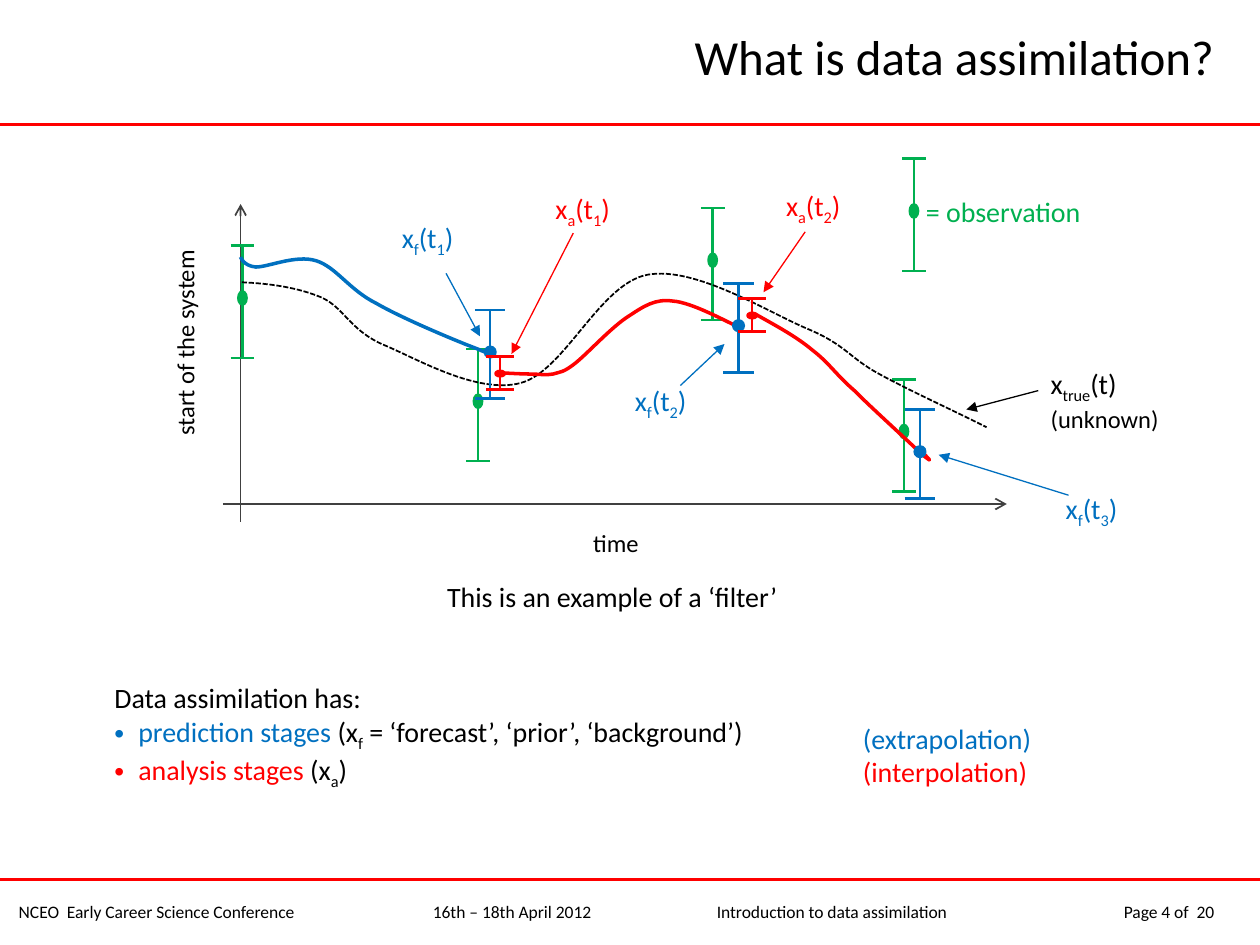
import pptx
import pptx.dml.color
import pptx.enum.dml
import pptx.enum.shapes
import pptx.enum.text
import pptx.oxml
import pptx.oxml.ns
import pptx.util

Pt = pptx.util.Pt
qn = pptx.oxml.ns.qn
COLOURS = {"black": "000000", "axis": "404040", "red": "FF0000", "blue": "0070C0", "green": "00B050"}
BARS = {
    "observation": dict(size=(13.5, 64.1), dot=(5.2, 8), middle=29.9, colour="green"),
    "forecast": dict(size=(17.4, 50.7), dot=(6.5, 6.5), middle=24.1, colour="blue"),
    "analysis": dict(size=(15.8, 18.7), dot=(5.8, 3.6), middle=9.7, colour="red"),
}
TRUTH = [
    (12.2, 71.3), (28.1, 72), (43.9, 74.2), (57.6, 79.9), (70.6, 85.7), (73.4, 97.9), (92.2, 106.6),
    (111.6, 114.5), (146.2, 135.4), (171.4, 128.9), (196.6, 122.4), (216.7, 72), (244.1, 67),
    (271.4, 61.9), (313.2, 88.6), (335.5, 97.9), (357.8, 107.3), (359.3, 114.5), (376.6, 123.8),
    (393.8, 133.2), (416.2, 143.3), (437.8, 154.1)]
FIRST_RUN = [
    (11.5, 56.9), (11.5, 56.9), (13, 61.9), (20.2, 62.6), (27.4, 62.6), (43.2, 55.4), (54.7, 59),
    (66.2, 62.6), (73.4, 75.6), (89.3, 83.5), (104.4, 92.2), (135.4, 105.1), (146.9, 109.4),
    (158.4, 114.5), (153.4, 110.9), (157, 111.6)]
SECOND_RUN = [
    (160.6, 123.1), (160.6, 123.1), (172.1, 123.8), (177.1, 123.8), (182.2, 123.8), (185.8, 124.6),
    (190.1, 123.8), (194.4, 122.4), (195.8, 123.1), (203, 117.4), (210.2, 111.6), (223.9, 96.5),
    (233.3, 90.7), (241.9, 85), (248.4, 80.6), (258.5, 82.1), (269.3, 82.8), (288.7, 93.6), (296.6, 97.2)]
THIRD_RUN = [
    (305.3, 89.3), (316.8, 95.8), (329, 102.2), (338.4, 110.2), (347.8, 117.4), (351.4, 123.8),
    (362.2, 133.2), (372.2, 143.3), (393.8, 162.7), (400.3, 169.2), (407.5, 175), (405.4, 172.8),
    (402.5, 169.9)]


def apply(target, values):
    """Set each named attribute on the target."""
    for name, value in values.items():
        setattr(target, name, value)


def rgb(colour):
    """Return the named colour."""
    return pptx.dml.color.RGBColor.from_string(COLOURS[colour])


def child(parent, tag, **values):
    """Append a drawing element with attributes."""
    element = pptx.oxml.parse_xml(f"<a:{tag} {pptx.oxml.ns.nsdecls('a')}/>")
    for name, value in values.items():
        element.set(name, str(value))
    parent.append(element)
    return element


def add_line(page, start, end, colour, width, head=None):
    """Draw a straight line with an optional arrowhead."""
    straight = pptx.enum.shapes.MSO_CONNECTOR.STRAIGHT
    line = page.shapes.add_connector(straight, *(Pt(value) for value in (*start, *end)))
    line.line.color.rgb = rgb(colour)
    line.line.width = Pt(width)
    if head:
        child(line.line._get_or_add_ln(), "tailEnd", type=head)
    child(line._element.spPr, "effectLst")


def add_curve(page, box, points, colour, width, dash=None):
    """Draw a smooth curve through Bezier control points."""
    places = [(Pt(box[0] + x), Pt(box[1] + y)) for x, y in points]
    builder = page.shapes.build_freeform(*places[0])
    builder.add_line_segments(places[1:], close=False)
    curve = builder.convert_to_shape()
    outline = curve._element.find(".//" + qn("a:path"))
    outline.set("fill", "none")
    steps = outline.findall(qn("a:lnTo"))
    for index in range(0, len(steps), 3):
        bend = child(outline, "cubicBezTo")
        for step in steps[index:index + 3]:
            bend.append(step[0])
            outline.remove(step)
    curve.shadow.inherit = False
    curve.fill.background()
    curve.line.color.rgb = rgb(colour)
    apply(curve.line, {"width": Pt(width), "dash_style": dash})


def add_text(page, box, paragraphs, size, wrap=False, align=None, bullets=(), tabs=()):
    """Write paragraphs of coloured spans, with subscripts between underscores."""
    label = page.shapes.add_textbox(*(Pt(value) for value in box))
    apply(label.text_frame, {"word_wrap": wrap, "vertical_anchor": pptx.enum.text.MSO_ANCHOR.MIDDLE,
                             "auto_size": pptx.enum.text.MSO_AUTO_SIZE.SHAPE_TO_FIT_TEXT})
    for index, spans in enumerate(paragraphs):
        para = label.text_frame.add_paragraph() if index else label.text_frame.paragraphs[0]
        properties = para._p.get_or_add_pPr()
        if index in bullets:
            properties.set("marL", str(Pt(13.7)))
            properties.set("indent", str(Pt(-13.7)))
            child(properties, "buFont", typeface="Arial")
            child(properties, "buChar", char="•")
        if tabs:
            stops = child(properties, "tabLst")
            for stop in tabs:
                child(stops, "tab", pos=Pt(stop), algn="l")
        para.alignment = align
        for text, colour in spans:
            for order, part in enumerate(text.split("_")):
                if part:
                    span = para.add_run()
                    span.text = part
                    apply(span.font, {"size": Pt(size), "name": "Calibri"})
                    span.font.color.rgb = rgb(colour)
                    if order % 2:
                        span._r.get_or_add_rPr().set("baseline", "-25000")
    return label


def add_error_bar(page, box, kind, x, y):
    """Draw an error bar with caps and a dot."""
    style = BARS[kind]
    (width, height), (across, down), colour = style["size"], style["dot"], style["colour"]
    left, top = box[0] + x, box[1] + y
    centre = left + width / 2
    for level in (top, top + height):
        add_line(page, (left, level), (left + width, level), colour, 1.5)
    add_line(page, (centre, top), (centre, top + height), colour, 1.5)
    dot = page.shapes.add_shape(
        pptx.enum.shapes.MSO_SHAPE.OVAL, Pt(centre - across / 2),
        Pt(top + style["middle"] - down / 2), Pt(across), Pt(down))
    dot.shadow.inherit = False
    dot.fill.solid()
    dot.fill.fore_color.rgb = rgb(colour)
    dot.line.color.rgb = rgb(colour)
    dot.line.width = Pt(1)


def add_plot(page, box):
    """Draw the axes, trajectories, error bars and labels."""
    left, top = box
    axis_name = add_text(page, (left - 81.4, top + 92.9, 121.7, 24.5), [[("start of the system", "black")]], 14)
    axis_name.rotation = 270
    add_text(page, (left + 205.9, top + 208.1, 41, 24.5), [[("time", "black")]], 14)
    for start, end in (((11.5, 208.1), (11.5, 26.6)), ((1.4, 198), (449.3, 198))):
        add_line(page, (left + start[0], top + start[1]), (left + end[0], top + end[1]), "axis", 1, "arrow")
    for x, y in ((383.8, 126.7), (5.8, 50.4), (274.5, 28.8), (140.4, 109.4), (389.5, 0.7)):
        add_error_bar(page, box, "observation", x, y)
    add_text(page, (left + 396, top + 17.3, 104.4, 26.6), [[("= observation", "green")]], 16)
    add_curve(page, box, TRUTH, "black", 1, pptx.enum.dml.MSO_LINE.SQUARE_DOT)
    for points, colour in ((FIRST_RUN, "blue"), (SECOND_RUN, "red"), (THIRD_RUN, "red")):
        add_curve(page, box, points, colour, 2)
    for kind, x, y in (("forecast", 145.4, 87.1), ("analysis", 151.9, 113.8), ("forecast", 287.3, 72),
                       ("analysis", 295.9, 80.6), ("forecast", 391, 144)):
        add_error_bar(page, box, kind, x, y)
    for text, colour, x, y, start, end in (
            ("x_f_(t_1_)", "blue", 96.5, 33.8, (128.9, 66.2), (148.3, 102.2)),
            ("x_a_(t_1_)", "red", 184.3, 17.3, (201.6, 43.2), (166.3, 112.3)),
            ("x_f_(t_2_)", "blue", 229.7, 126.7, (262.8, 130.3), (288, 106.6)),
            ("x_a_(t_2_)", "red", 316.1, 15.1, (334.1, 42.5), (310.3, 77)),
            ("x_f_(t_3_)", "blue", 475.9, 188.6, (484.6, 193), (410.4, 169.9)),
            ("x_true_(t)", "black", 467.3, 116.6, (467.3, 133.2), (426.2, 144))):
        width = 77 if colour == "black" else 46
        label = add_text(page, (left + x, top + y, width, 26.6), [[(text, colour)]], 16)
        if colour == "black":
            label.height = Pt(43.9)
            para = label.text_frame.add_paragraph()
            span = para.add_run()
            span.text = "(unknown)"
            apply(span.font, {"size": Pt(14), "name": "Calibri"})
            span.font.color.rgb = rgb(colour)
        add_line(page, (left + start[0], top + start[1]), (left + end[0], top + end[1]), colour, 0.75, "triangle")


def add_stages(page, box):
    """List the stages of data assimilation and what each one does."""
    left, top = box
    add_text(page, (left, top, 379.4, 67.7), [
        [("Data assimilation has:", "black")],
        [("prediction stages ", "blue"), ("(x_f_ = ‘forecast’, ‘prior’, ‘background’)", "black")],
        [("analysis stages ", "red"), ("(x_a_)", "black")]], 16, bullets=(1, 2))
    add_text(page, (left + 427.7, top + 21.6, 112.3, 46),
             [[("(extrapolation)", "blue")], [("(interpolation)", "red")]], 16)


def add_frame(page, box):
    """Place the title, the two rules and the footer."""
    left, top, width = box
    for level in (71.3, 502.6):
        add_line(page, (left, top + level), (left + width, top + level), "red", 1.5)
    add_text(page, (left + 139, top + 10, 561.6, 44), [[("What is data assimilation?", "black")]], 28,
             wrap=True, align=pptx.enum.text.PP_ALIGN.RIGHT)
    footer = "\t".join(("NCEO  Early Career Science Conference", "16th – 18th April 2012",
                        "Introduction to data assimilation", "Page 4 of  20"))
    add_text(page, (left + 3.6, top + 511.2, 713.5, 19.4), [[(footer, "black")]], 10,
             wrap=True, tabs=(236.6, 398.9, 631.5))


def main():
    """Build the slide and save it."""
    deck = pptx.Presentation()
    apply(deck, {"slide_width": Pt(720), "slide_height": Pt(540)})
    page = deck.slides.add_slide(deck.slide_layouts[6])
    add_frame(page, (0, 0, 720))
    add_plot(page, (126, 90))
    add_text(page, (248.4, 327.6, 205.2, 26.6), [[("This is an example of a ‘filter’", "black")]], 16)
    add_stages(page, (58.3, 386.6))
    deck.save("out.pptx")


if __name__ == "__main__":
    main()
